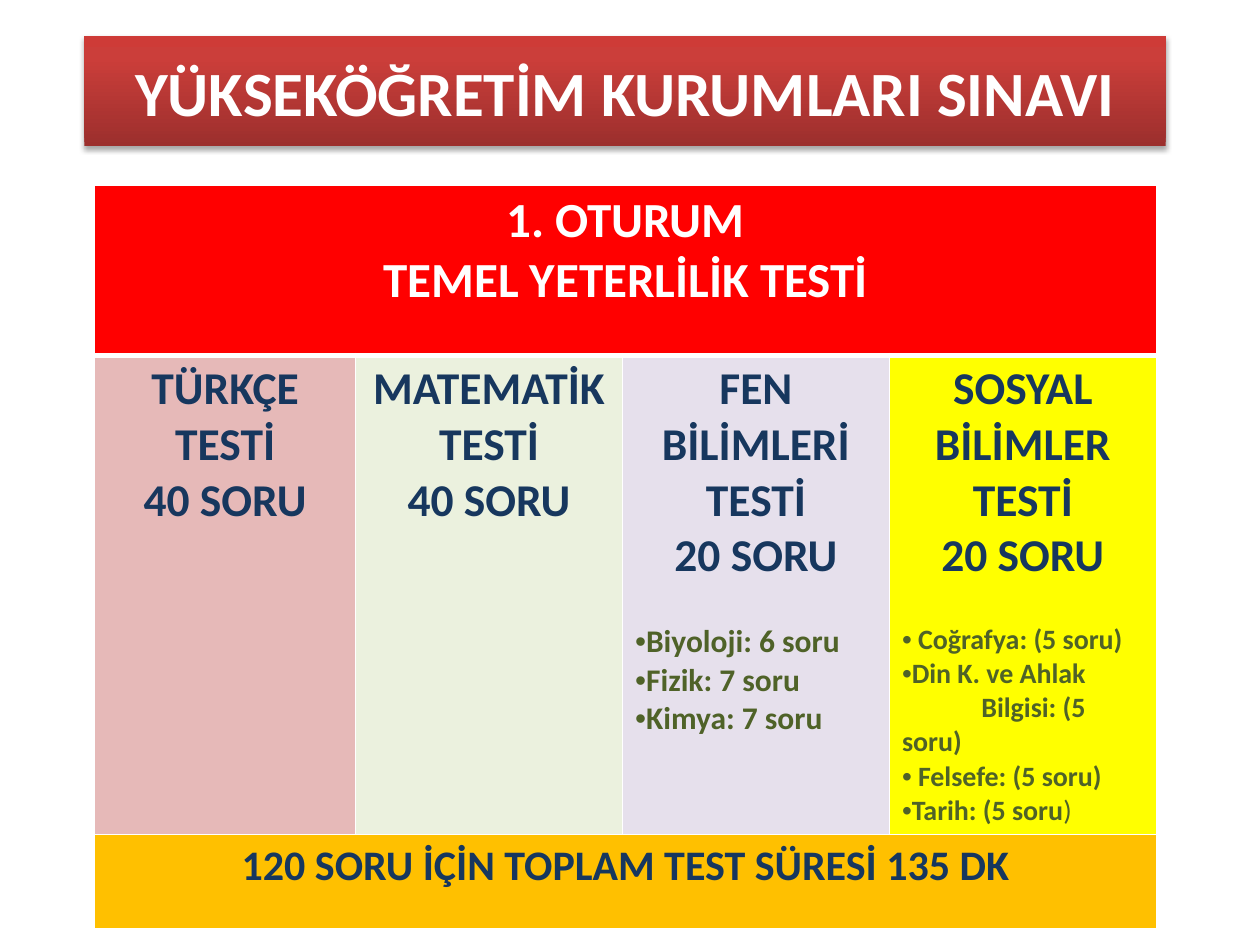
from lxml.etree import SubElement
from pptx import Presentation
from pptx.dml.color import RGBColor
from pptx.enum.text import MSO_ANCHOR, MSO_AUTO_SIZE, PP_ALIGN
from pptx.oxml import parse_xml
from pptx.oxml.ns import nsdecls, qn
from pptx.util import Cm, Pt

FONT = "Calibri"
COLORS = {
    "white": "FFFFFF", "navy": "17375E", "olive": "4F6228",
    "red": "FF0000", "pink": "E6B9B8", "green": "EBF1DE",
    "lilac": "E6E0EC", "yellow": "FFFF00", "orange": "FFC000",
    "title_dark": "9C2F2D", "title_mid": "CB3E3A", "title_light": "CE3B37",
}
TITLE = "YÜKSEKÖĞRETİM KURUMLARI SINAVI"
SESSION = ["1. OTURUM", "TEMEL YETERLİLİK TESTİ"]
DURATION = ["120 SORU İÇİN TOPLAM TEST SÜRESİ 135 DK"]
# Heading lines, fill, subject list and size of the list
TESTS = [
    (["TÜRKÇE TESTİ", "40 SORU"], "pink", [], 18),
    (["MATEMATİK TESTİ", "40 SORU"], "green", [], 18),
    (["FEN BİLİMLERİ TESTİ", "20 SORU"], "lilac",
     ["Biyoloji: 6 soru", "Fizik: 7 soru", "Kimya: 7 soru"], 18),
    (["SOSYAL BİLİMLER TESTİ", "20 SORU"], "yellow",
     [" Coğrafya: (5 soru)", "Din K. ve Ahlak\v\tBilgisi: (5 soru)",
      " Felsefe: (5 soru)", "Tarih: (5 soru"], 16),
]


def rgb(name):
    return RGBColor.from_string(COLORS[name])


def format_runs(paragraph, size, color):
    for run in paragraph.runs:
        run.font.name = FONT
        run.font.size = Pt(size)
        run.font.bold = True
        run.font.color.rgb = rgb(color)


def style_title_box(title):
    """Give the title a rounded outline, a gradient and a soft shadow."""
    stops = "".join(
        f'<a:gs pos="{position}"><a:srgbClr val="{COLORS[name]}"/></a:gs>'
        for position, name in
        [(0, "title_dark"), (80000, "title_mid"), (100000, "title_light")])
    namespace = nsdecls("a")
    for xml in (
        f'<a:prstGeom {namespace} prst="roundRect"><a:avLst/></a:prstGeom>',
        f'<a:gradFill {namespace} rotWithShape="1"><a:gsLst>{stops}</a:gsLst>'
        '<a:lin ang="16200000" scaled="0"/></a:gradFill>',
        f'<a:ln {namespace}><a:noFill/></a:ln>',
        f'<a:effectLst {namespace}><a:outerShdw blurRad="40000" dist="23000"'
        ' dir="5400000" rotWithShape="0"><a:srgbClr val="000000">'
        '<a:alpha val="35000"/></a:srgbClr></a:outerShdw></a:effectLst>',
    ):
        title._element.spPr.append(parse_xml(xml))


def add_title(slide):
    title = slide.shapes.title
    title.left, title.top = Cm(1.7), Cm(0.73)
    title.width, title.height = Cm(21.8), Cm(2.21)
    style_title_box(title)
    text_frame = title.text_frame
    text_frame.text = TITLE
    text_frame.word_wrap = True
    text_frame.auto_size = MSO_AUTO_SIZE.NONE
    text_frame.vertical_anchor = MSO_ANCHOR.MIDDLE
    text_frame.paragraphs[0].alignment = PP_ALIGN.CENTER
    format_runs(text_frame.paragraphs[0], 36, "white")


def set_borders(cell, top, bottom):
    properties = cell._tc.get_or_add_tcPr()
    for side, width in (("L", 1), ("R", 1), ("T", top), ("B", bottom)):
        line = SubElement(properties, qn(f"a:ln{side}"), w=str(Pt(width)))
        fill = SubElement(line, qn("a:solidFill"))
        SubElement(fill, qn("a:srgbClr"), val=COLORS["white"])


def fill_cell(cell, lines, fill, size, color):
    cell.fill.solid()
    cell.fill.fore_color.rgb = rgb(fill)
    cell.text_frame.text = "\n".join(lines)
    for paragraph in cell.text_frame.paragraphs:
        paragraph.alignment = PP_ALIGN.CENTER
        format_runs(paragraph, size, color)


def add_bullets(cell, items, size):
    for index, item in enumerate(items):
        paragraph = cell.text_frame.add_paragraph()
        properties = paragraph._p.get_or_add_pPr()
        SubElement(properties, qn("a:buFont"), typeface="Arial")
        SubElement(properties, qn("a:buChar"), char="•")
        if "\t" in item:
            tabs = SubElement(properties, qn("a:tabLst"))
            SubElement(tabs, qn("a:tab"), pos=str(Cm(1.6)), algn="l")
        paragraph.text = item
        paragraph.alignment = PP_ALIGN.LEFT
        if index == 0:
            paragraph.space_before = Pt(22)
        format_runs(paragraph, size, "olive")


def add_exam_table(slide):
    frame = slide.shapes.add_table(
        3, len(TESTS), Cm(1.91), Cm(3.73), Cm(21.41), Cm(14.86))
    table = frame.table
    table.horz_banding = False
    for column, width in zip(table.columns, (5.26, 5.38, 5.38, 5.38)):
        column.width = Cm(width)
    for row, height in zip(table.rows, (3.43, 9.53, 1.9)):
        row.height = Cm(height)
    for row, (top, bottom) in zip(table.rows, ((1, 3), (3, 1), (1, 1))):
        for cell in row.cells:
            set_borders(cell, top, bottom)

    # Full-width session and duration rows
    for row in (0, 2):
        table.cell(row, 0).merge(table.cell(row, len(TESTS) - 1))
    fill_cell(table.cell(0, 0), SESSION, "red", 28, "white")
    fill_cell(table.cell(2, 0), DURATION, "orange", 24, "navy")

    # One column per test
    for column, (heading, fill, subjects, size) in enumerate(TESTS):
        cell = table.cell(1, column)
        fill_cell(cell, heading, fill, 26, "navy")
        add_bullets(cell, subjects, size)

    # The last bracket is not bold
    last_paragraph = table.cell(1, 3).text_frame.paragraphs[-1]
    last_paragraph.add_run().text = ")"
    format_runs(last_paragraph, 16, "olive")
    last_paragraph.runs[-1].font.bold = False


def main():
    presentation = Presentation()
    presentation.slide_width, presentation.slide_height = Cm(25.4), Cm(19.05)
    slide = presentation.slides.add_slide(presentation.slide_layouts[5])
    add_title(slide)
    add_exam_table(slide)
    presentation.save("out.pptx")


if __name__ == "__main__":
    main()
